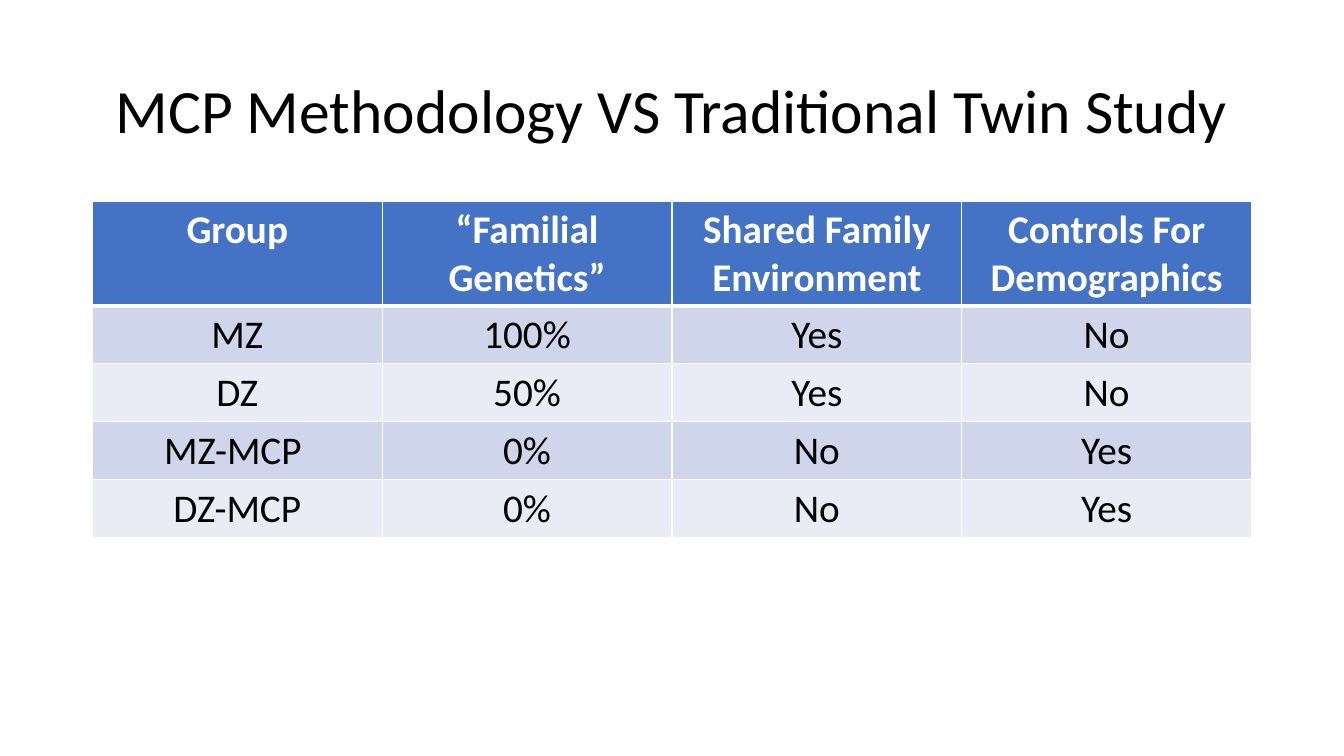
"""Build a slide with a table comparing MCP methodology with a traditional twin study."""
from pptx import Presentation
from pptx.dml.color import RGBColor
from pptx.enum import text
from pptx.oxml import parse_xml
from pptx.oxml.ns import nsdecls
from pptx.util import Pt

TITLE = "MCP Methodology VS Traditional Twin Study"
ROWS = [
    ("Group", "“Familial Genetics”", "Shared Family Environment", "Controls For Demographics"),
    ("MZ", "100%", "Yes", "No"),
    ("DZ", "50%", "Yes", "No"),
    ("MZ-MCP ", "0%", "No", "Yes"),
    ("DZ-MCP", "0%", "No", "Yes"),
]

FONT = "Calibri"
BLACK = RGBColor(0x00, 0x00, 0x00)
WHITE = RGBColor(0xFF, 0xFF, 0xFF)
HEADER = RGBColor(0x44, 0x72, 0xC4)
BANDS = (RGBColor(0xE9, 0xEB, 0xF5), RGBColor(0xCF, 0xD5, 0xEA))

LEFT, WIDTH = 66, 828
TITLE_TOP, TITLE_HEIGHT = 28.75, 104.38
TABLE_TOP, HEADER_HEIGHT, ROW_HEIGHT = 144, 74.4, 41.4


def format_paragraph(p, size, color, bold=False):
    p.alignment = text.PP_ALIGN.CENTER
    for r in p.runs:
        r.font.name, r.font.size, r.font.bold = FONT, Pt(size), bold
        r.font.color.rgb = color


def add_border(cell, side, width):
    cell._tc.get_or_add_tcPr().append(parse_xml(
        f'<a:ln{side} {nsdecls("a")} w="{Pt(width)}"><a:solidFill>'
        f'<a:srgbClr val="{WHITE}"/></a:solidFill></a:ln{side}>'))


def add_title(slide):
    tf = slide.shapes.add_textbox(
        Pt(LEFT), Pt(TITLE_TOP), Pt(WIDTH), Pt(TITLE_HEIGHT)).text_frame
    tf.word_wrap = True
    tf.vertical_anchor = text.MSO_ANCHOR.MIDDLE
    p = tf.paragraphs[0]
    p.text = TITLE
    p.line_spacing = 0.9
    format_paragraph(p, 44, BLACK)


def add_comparison(slide):
    height = HEADER_HEIGHT + ROW_HEIGHT * (len(ROWS) - 1)
    table = slide.shapes.add_table(
        len(ROWS), len(ROWS[0]), Pt(LEFT), Pt(TABLE_TOP), Pt(WIDTH), Pt(height)).table
    for i, row in enumerate(ROWS):
        is_header = i == 0
        table.rows[i].height = Pt(HEADER_HEIGHT if is_header else ROW_HEIGHT)
        for j, value in enumerate(row):
            cell = table.cell(i, j)
            for side in "LRTB":
                thick = (i, side) in ((0, "B"), (1, "T"))
                add_border(cell, side, 3 if thick else 1)
            cell.fill.solid()
            cell.fill.fore_color.rgb = HEADER if is_header else BANDS[i % 2]
            p = cell.text_frame.paragraphs[0]
            p.text = value
            format_paragraph(p, 28, WHITE if is_header else BLACK, is_header)


def main():
    prs = Presentation()
    prs.slide_width, prs.slide_height = Pt(960), Pt(540)
    slide = prs.slides.add_slide(prs.slide_layouts[6])
    add_title(slide)
    add_comparison(slide)
    prs.save("out.pptx")


if __name__ == "__main__":
    main()
